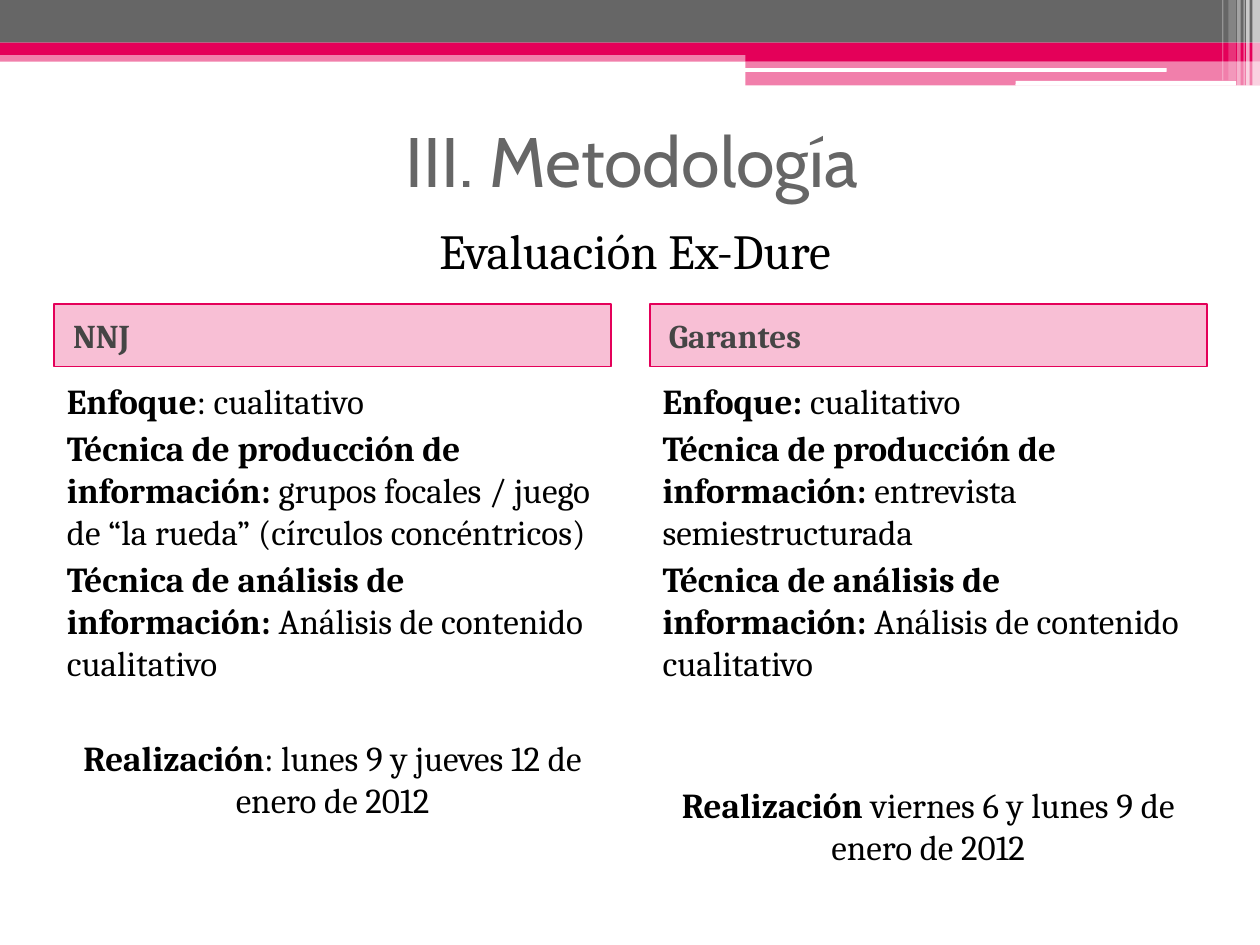
"""Build the methodology slide comparing two evaluation groups."""
from lxml import etree
from pptx import Presentation
from pptx.dml.color import RGBColor
from pptx.enum import shapes, text
from pptx.oxml import ns
from pptx.util import Pt

PINK = RGBColor(0xE4, 0x00, 0x59)
GREY = RGBColor(0x66, 0x66, 0x66)
DARK = RGBColor(0x45, 0x45, 0x45)
BLACK = RGBColor(0, 0, 0)
WHITE = RGBColor(0xFF, 0xFF, 0xFF)
RECT = shapes.MSO_SHAPE.RECTANGLE
ROUND = shapes.MSO_SHAPE.ROUNDED_RECTANGLE
CENTER = text.PP_ALIGN.CENTER
LEFT = text.PP_ALIGN.LEFT
MIDDLE = text.MSO_ANCHOR.MIDDLE
TOP = text.MSO_ANCHOR.TOP
FIXED = text.MSO_AUTO_SIZE.NONE
GROW = text.MSO_AUTO_SIZE.SHAPE_TO_FIT_TEXT

BANDS = [
    (RECT, 0, 28.8, 720, 6.5, PINK, 50),
    (RECT, 0, 0, 720, 24.4, GREY, 100),
    (RECT, 0, 24.4, 720, 7, PINK, 100),
    (RECT, 426, 28, 294, 7, PINK, 100),
    (RECT, 426, 34.8, 294, 14, PINK, 50),
    (ROUND, 425.5, 38.9, 241.2, 2.2, WHITE, 100),
    (ROUND, 580.3, 46.2, 126, 2.7, WHITE, 100),
]
STRIPES = [
    (715.7, 4.3, 49, 65),
    (712.1, 2, 49, 65),
    (710.6, 0.7, 49, 60),
    (707, 2, 49, 40),
    (702, 4.3, 46, 20),
    (698.4, 0.7, 46, 30),
]
PRODUCTION = "Técnica de producción de información: "
ANALYSIS = ("Técnica de análisis de información: ", "Análisis de contenido cualitativo")
COLUMN_WIDTH = 318.2
GROUPS = [
    (31, "NNJ", 30, [
        ("Enfoque", ": cualitativo"),
        (PRODUCTION, "grupos focales / juego de “la rueda” (círculos concéntricos)"),
        ANALYSIS,
        ("Realización", ": lunes 9 y jueves 12 de enero de 2012"),
    ]),
    (371.4, "Garantes", 57, [
        ("Enfoque: ", "cualitativo"),
        (PRODUCTION, "entrevista semiestructurada"),
        ANALYSIS,
        ("Realización ", "viernes 6 y lunes 9 de enero de 2012"),
    ]),
]


class Deck:
    """Hold the text style and the current slide."""

    heading_font = "Cabin"
    body_font = "Cambria"

    def __init__(self):
        """Start a presentation with one comparison slide."""
        self.file = Presentation()
        self.file.slide_width, self.file.slide_height = Pt(720), Pt(540)
        self.slide = self.file.slides.add_slide(self.file.slide_layouts[4])

    def paint(self, shape, color, opacity):
        """Fill a shape with a colour at an opacity in percent."""
        shape.fill.solid()
        shape.fill.fore_color.rgb = color
        if opacity < 100:
            tint = shape._element.spPr.find(ns.qn("a:solidFill"))[0]
            etree.SubElement(tint, ns.qn("a:alpha"), val=str(opacity * 1000))

    def band(self, kind, left, top, width, height, color, opacity):
        """Add a decorative band without outline."""
        bar = self.slide.shapes.add_shape(kind, Pt(left), Pt(top), Pt(width), Pt(height))
        self.paint(bar, color, opacity)
        bar.line.fill.background()
        bar.shadow.inherit = False

    def place(self, index, left, top, width, height, anchor):
        """Move a placeholder and return it."""
        holder = self.slide.placeholders[index]
        holder.left, holder.top = Pt(left), Pt(top)
        holder.width, holder.height = Pt(width), Pt(height)
        frame = holder.text_frame
        frame.word_wrap, frame.auto_size, frame.vertical_anchor = True, FIXED, anchor
        return holder

    def add_words(self, paragraph, words, size, font, color, bold=False):
        """Add one formatted run to a paragraph."""
        run = paragraph.add_run()
        run.text = words
        run.font.size, run.font.name, run.font.bold = Pt(size), font, bold
        run.font.color.rgb = color

    def arrange(self, paragraph, align, before, margin=0):
        """Set a paragraph's alignment, spacing and indent, without bullet."""
        paragraph.alignment, paragraph.space_before = align, Pt(before)
        props = paragraph._p.get_or_add_pPr()
        props.set("marL", str(int(Pt(margin))))
        props.set("indent", "0")
        etree.SubElement(props, ns.qn("a:buNone"))

    def title(self, words):
        """Put in the slide title."""
        heading = self.place(0, 31, 49, 660.2, 84.2, MIDDLE).text_frame.paragraphs[0]
        self.arrange(heading, CENTER, 0)
        self.add_words(heading, words, 40, self.heading_font, GREY)

    def subtitle(self, words):
        """Add the centred line under the title."""
        box = self.slide.shapes.add_textbox(Pt(48.2), Pt(122.4), Pt(629.3), Pt(41))
        box.text_frame.word_wrap, box.text_frame.auto_size = True, GROW
        line = box.text_frame.paragraphs[0]
        line.alignment = CENTER
        self.add_words(line, words, 28, self.body_font, BLACK)

    def label(self, index, left, words):
        """Put in a tinted column heading."""
        holder = self.place(index, left, 173.5, COLUMN_WIDTH, 36, MIDDLE)
        self.paint(holder, PINK, 25)
        holder.line.color.rgb, holder.line.width = PINK, Pt(1)
        line = holder.text_frame.paragraphs[0]
        self.arrange(line, LEFT, 3, 3.6)
        self.add_words(line, words, 19, self.body_font, DARK, True)

    def details(self, index, left, items, date_gap):
        """Put in a column of terms, the last being a centred date."""
        frame = self.place(index, left, 213.1, COLUMN_WIDTH, 306, TOP).text_frame
        for number, (term, description) in enumerate(items):
            line = frame.add_paragraph() if number else frame.paragraphs[0]
            if number == len(items) - 1:
                self.arrange(line, CENTER, date_gap)
            else:
                self.arrange(line, LEFT, 3)
            self.add_words(line, term, 20, self.body_font, BLACK, True)
            self.add_words(line, description, 20, self.body_font, BLACK)


def main():
    """Build and save the slide."""
    deck = Deck()
    for band in BANDS:
        deck.band(*band)
    for left, width, height, opacity in STRIPES:
        deck.band(RECT, left, 0, width, height, WHITE, opacity)
    deck.title("III. Metodología")
    for number, (left, group, date_gap, items) in enumerate(GROUPS):
        deck.label(1 + 2 * number, left, group)
        deck.details(2 + 2 * number, left, items, date_gap)
    deck.subtitle("Evaluación Ex-Dure")
    deck.file.save("out.pptx")


if __name__ == "__main__":
    main()
